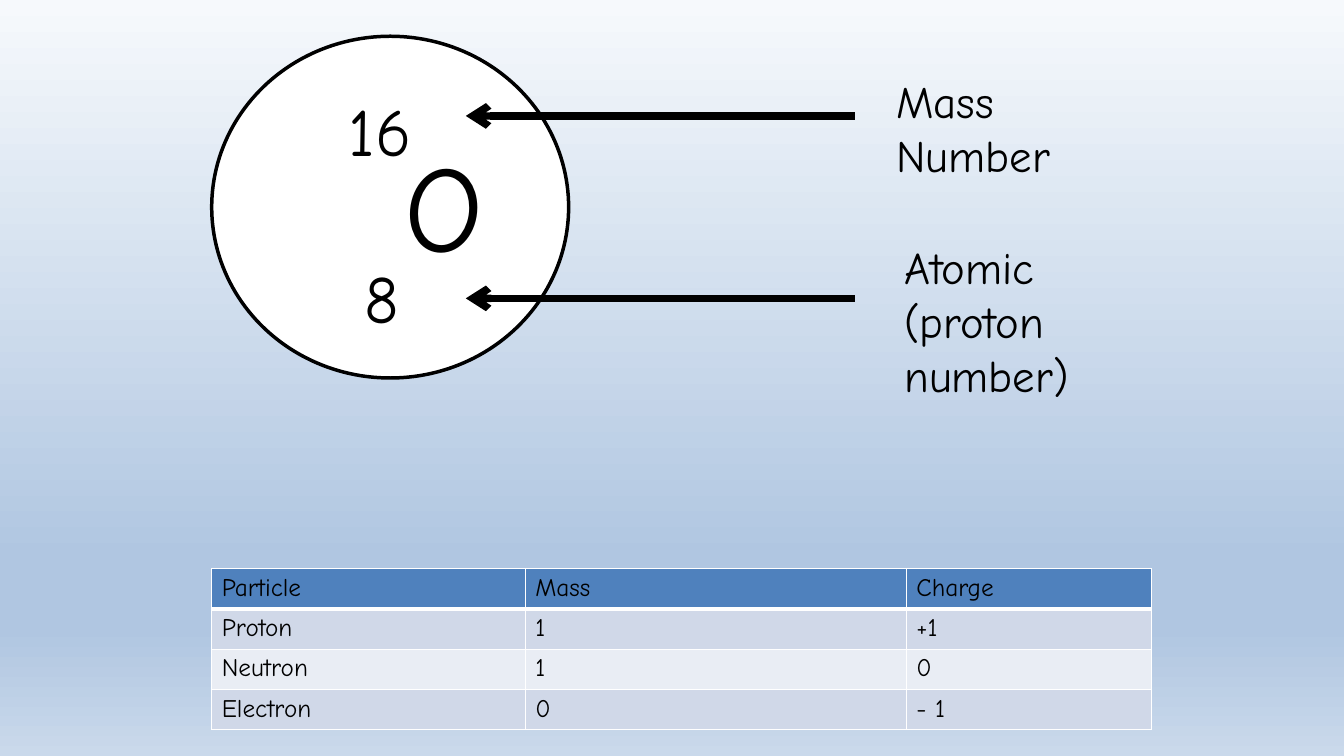
from dataclasses import dataclass

from pptx import Presentation
from pptx.dml.color import RGBColor
from pptx.enum.shapes import MSO_CONNECTOR, MSO_SHAPE
from pptx.oxml import parse_xml
from pptx.oxml.ns import nsdecls
from pptx.util import Inches, Pt


@dataclass(frozen=True)
class Theme:
    font: str = "Comic Neue"
    ink: str = "000000"
    white: str = "FFFFFF"
    header: str = "4F81BD"
    bands: tuple = ("D0D8E8", "E9EDF4")
    sky: tuple = ((0, "F6F9FC"), (74, "B0C6E1"), (83, "B0C6E1"), (100, "CAD9EB"))
    symbol: int = 88
    number: int = 48
    label: int = 32
    cell: int = 18
    outline: float = 2.5
    arrow: float = 5.25
    rule: int = 1
    header_rule: int = 3


THEME = Theme()

PARTICLES = (
    ("Particle", "Mass", "Charge"),
    ("Proton", "1", "+1"),
    ("Neutron", "1", "0"),
    ("Electron", "0", "- 1"),
)


def rgb(value):
    return RGBColor.from_string(value)


def write(tf, text, size):
    r = tf.paragraphs[0].add_run()
    r.text = text
    r.font.name = THEME.font
    r.font.size = Pt(size)
    r.font.color.rgb = rgb(THEME.ink)


def add_text(s, text, size, left, top, width, height):
    tf = s.shapes.add_textbox(
        Inches(left), Inches(top), Inches(width), Inches(height)).text_frame
    tf.word_wrap = True
    write(tf, text, size)


def add_sky(s):
    """Fill the background with a vertical gradient."""
    stops = "".join(
        f'<a:gs pos="{pos * 1000}"><a:srgbClr val="{color}"/></a:gs>'
        for pos, color in THEME.sky)
    s.element.cSld.insert(0, parse_xml(
        f'<p:bg {nsdecls("p", "a")}><p:bgPr><a:gradFill rotWithShape="1">'
        f'<a:gsLst>{stops}</a:gsLst><a:lin ang="5400000" scaled="0"/>'
        '</a:gradFill><a:effectLst/></p:bgPr></p:bg>'))


def add_atom(s, left, top, width, height):
    circle = s.shapes.add_shape(
        MSO_SHAPE.OVAL, Inches(left), Inches(top), Inches(width), Inches(height))
    circle.shadow.inherit = False
    circle.fill.solid()
    circle.fill.fore_color.rgb = rgb(THEME.white)
    circle.line.color.rgb = rgb(THEME.ink)
    circle.line.width = Pt(THEME.outline)
    add_text(s, "O", THEME.symbol, left + 1.81, top + 0.87, 0.55, 1.58)
    add_text(s, "16", THEME.number, left + 1.26, top + 0.48, 1.02, 0.91)
    add_text(s, "8", THEME.number, left + 1.42, top + 2.13, 1.02, 0.91)


def add_arrow(s, start, end, y):
    arrow = s.shapes.add_connector(
        MSO_CONNECTOR.STRAIGHT, Inches(start), Inches(y), Inches(end), Inches(y))
    arrow.line.color.rgb = rgb(THEME.ink)
    arrow.line.width = Pt(THEME.arrow)
    arrow.line._get_or_add_ln().append(
        parse_xml(f'<a:tailEnd {nsdecls("a")} type="arrow"/>'))
    arrow._element.spPr.append(parse_xml(f'<a:effectLst {nsdecls("a")}/>'))


def add_callouts(s, left, top):
    """Place both arrows, pointing left into the atom, with their labels."""
    callouts = (
        ("Mass Number", 0.47, 4.17, 0, 1.18),
        ("Atomic (proton number)", 2.28, 4.25, 1.65, 1.72),
    )
    for text, arrow_y, text_x, text_y, height in callouts:
        add_arrow(s, left + 3.86, left, top + arrow_y)
        add_text(s, text, THEME.label, left + text_x, top + text_y, 2.44, height)


def style_cell(cell, fill, bottom_rule):
    tcPr = cell._tc.get_or_add_tcPr()
    rules = {"L": THEME.rule, "R": THEME.rule, "T": THEME.rule, "B": bottom_rule}
    for side, width in rules.items():
        tcPr.append(parse_xml(
            f'<a:ln{side} {nsdecls("a")} w="{Pt(width)}"><a:solidFill>'
            f'<a:srgbClr val="{THEME.white}"/></a:solidFill></a:ln{side}>'))
    cell.fill.solid()
    cell.fill.fore_color.rgb = rgb(fill)


def add_particle_table(s, left, top, width, height):
    table = s.shapes.add_table(
        len(PARTICLES), len(PARTICLES[0]),
        Inches(left), Inches(top), Inches(width), Inches(height)).table
    for column, share in zip(table.columns, (3.11, 3.78, 2.43)):
        column.width = Inches(width * share / 9.32)
    for i, row in enumerate(PARTICLES):
        fill = THEME.bands[(i - 1) % 2] if i else THEME.header
        bottom_rule = THEME.rule if i else THEME.header_rule
        for j, text in enumerate(row):
            cell = table.cell(i, j)
            write(cell.text_frame, text, THEME.cell)
            style_cell(cell, fill, bottom_rule)


def main():
    prs = Presentation()
    prs.slide_width, prs.slide_height = Inches(13.33), Inches(7.5)
    s = prs.slides.add_slide(prs.slide_layouts[6])
    add_sky(s)
    add_particle_table(s, 2.1, 5.64, 9.32, 1.6)
    add_atom(s, 2.1, 0.36, 3.54, 3.39)
    add_callouts(s, 4.62, 0.68)
    prs.save("out.pptx")


if __name__ == "__main__":
    main()
